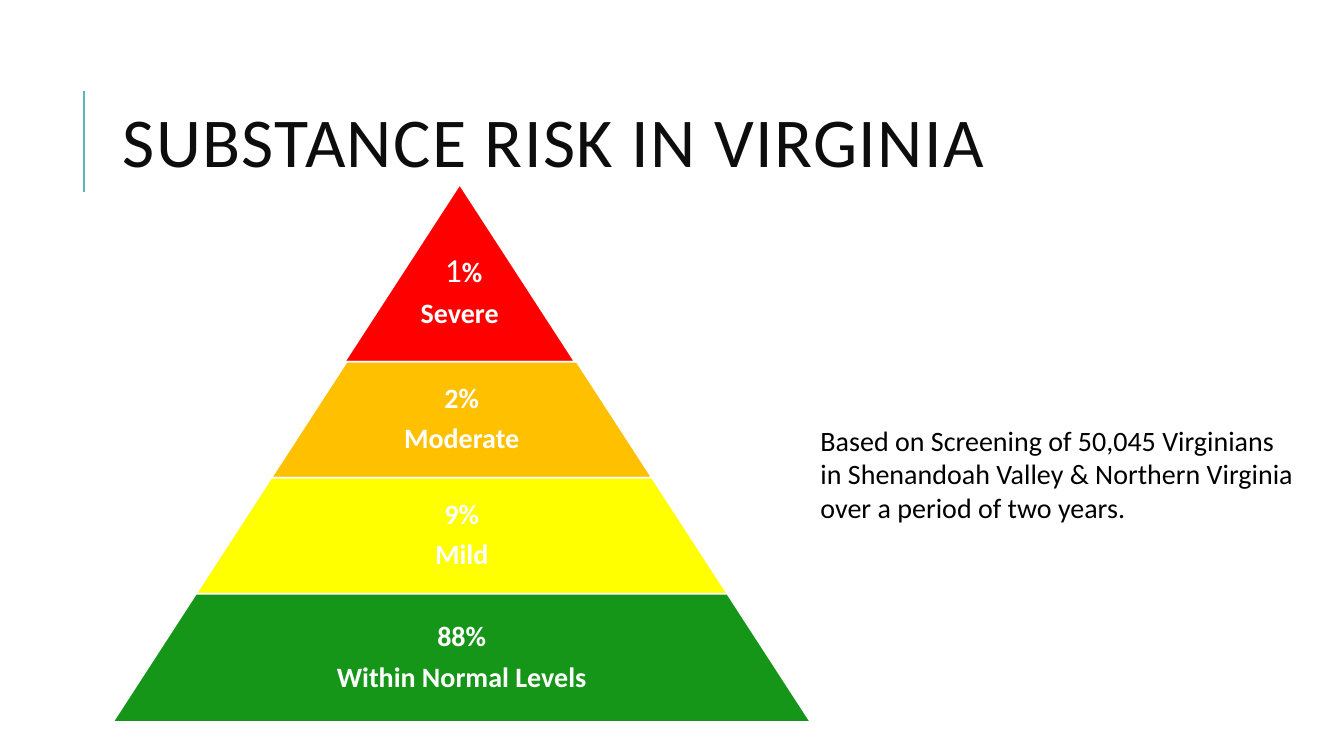
from lxml import etree
from pptx import Presentation
from pptx import util as u
from pptx.dml.color import RGBColor
from pptx.enum import shapes, text
from pptx.oxml.ns import qn


def color(hex_value):
    return RGBColor.from_string(hex_value)


class Canvas:
    """Holds the slide and the shared style."""
    font = "Calibri"

    def __init__(self, slide):
        self.slide = slide

    def line(self, x1, y1, x2, y2, hex_value, width):
        connector = self.slide.shapes.add_connector(
            shapes.MSO_CONNECTOR.STRAIGHT, u.Pt(x1), u.Pt(y1), u.Pt(x2), u.Pt(y2))
        connector.line.color.rgb = color(hex_value)
        connector.line.width = u.Pt(width)
        properties = connector._element.spPr
        etree.SubElement(properties, qn("a:effectLst"))

    def trapezoid(self, left, top, width, height, slope, fill):
        shape = self.slide.shapes.add_shape(
            shapes.MSO_SHAPE.TRAPEZOID, u.Pt(left), u.Pt(top), u.Pt(width), u.Pt(height))
        shape.adjustments[0] = slope
        shape.shadow.inherit = False
        shape.fill.solid()
        shape.fill.fore_color.rgb = color(fill)
        shape.line.color.rgb = color("FFFFFF")
        shape.line.width = u.Pt(1.25)

    def text(self, left, top, width, height, lines, size, hex_value, bold=False,
             align=text.PP_ALIGN.LEFT, anchor=text.MSO_ANCHOR.TOP,
             line_spacing=1.0, space_after=0, inset=None):
        box = self.slide.shapes.add_textbox(
            u.Pt(left), u.Pt(top), u.Pt(width), u.Pt(height))
        frame = box.text_frame
        frame.word_wrap = True
        frame.vertical_anchor = anchor
        if inset is not None:
            frame.margin_left = frame.margin_right = u.Pt(inset)
            frame.margin_top = frame.margin_bottom = u.Pt(inset)
        frame.text = "\n".join(lines)
        for paragraph in frame.paragraphs:
            paragraph.alignment = align
            paragraph.line_spacing = line_spacing
            paragraph.space_after = u.Pt(space_after)
            for run in paragraph.runs:
                self.format(run, size, hex_value, bold)
        return frame

    def format(self, run, size, hex_value, bold):
        run.font.name = self.font
        run.font.size = u.Pt(size)
        run.font.bold = bold
        run.font.color.rgb = color(hex_value)


def main():
    presentation = Presentation()
    presentation.slide_width, presentation.slide_height = u.Pt(960), u.Pt(540)
    canvas = Canvas(presentation.slides.add_slide(presentation.slide_layouts[6]))

    # Title with accent line
    canvas.line(60, 136.8, 60, 64.8, "58B6C0", 1.5)
    title = canvas.text(80.6, 46, 765.4, 118, ["SUBSTANCE RISK IN VIRGINIA"], 50,
                        "0D0D0D", anchor=text.MSO_ANCHOR.MIDDLE, line_spacing=0.8)
    title.paragraphs[0].runs[0].font._element.set("spc", "100")

    # Risk pyramid: height, centre, label share of width, label drop, fill, label
    tiers = [
        (126.7, 328.4, 1, 26, "FF0000", [" 1", "Severe"]),
        (82.9, 329.8, 0.65, 0, "FFC000", ["2%", "Moderate"]),
        (82.9, 329.8, 0.65, 0, "FFFF00", ["9%", "Mild"]),
        (91.5, 329.8, 0.65, 0, "169619", ["88%", "Within Normal Levels"]),
    ]
    slope = 0.649
    apex = top = 131.7
    labels = []
    for height, center, share, drop, fill, lines in tiers:
        width = 2 * slope * (top + height - apex)
        canvas.trapezoid(center - width / 2, top, width, height, slope, fill)
        label_width = width * share
        labels.append(canvas.text(
            center - label_width / 2, top + drop, label_width, height - drop, lines,
            20, "FFFFFF", True, text.PP_ALIGN.CENTER, text.MSO_ANCHOR.MIDDLE,
            0.9, 7, 2))
        top += height

    # Severe figure: large light digit, small bold percent sign
    severe = labels[0].paragraphs[0]
    canvas.format(severe.runs[0], 24, "FFFFFF", False)
    percent = severe.add_run()
    percent.text = "%"
    canvas.format(percent, 20, "FFFFFF", True)

    # Sample note
    canvas.text(579, 298.8, 357, 80,
                ["Based on Screening of 50,045 Virginians in Shenandoah Valley & "
                 "Northern Virginia over a period of two years."], 20, "000000")

    presentation.save("out.pptx")


if __name__ == "__main__":
    main()
